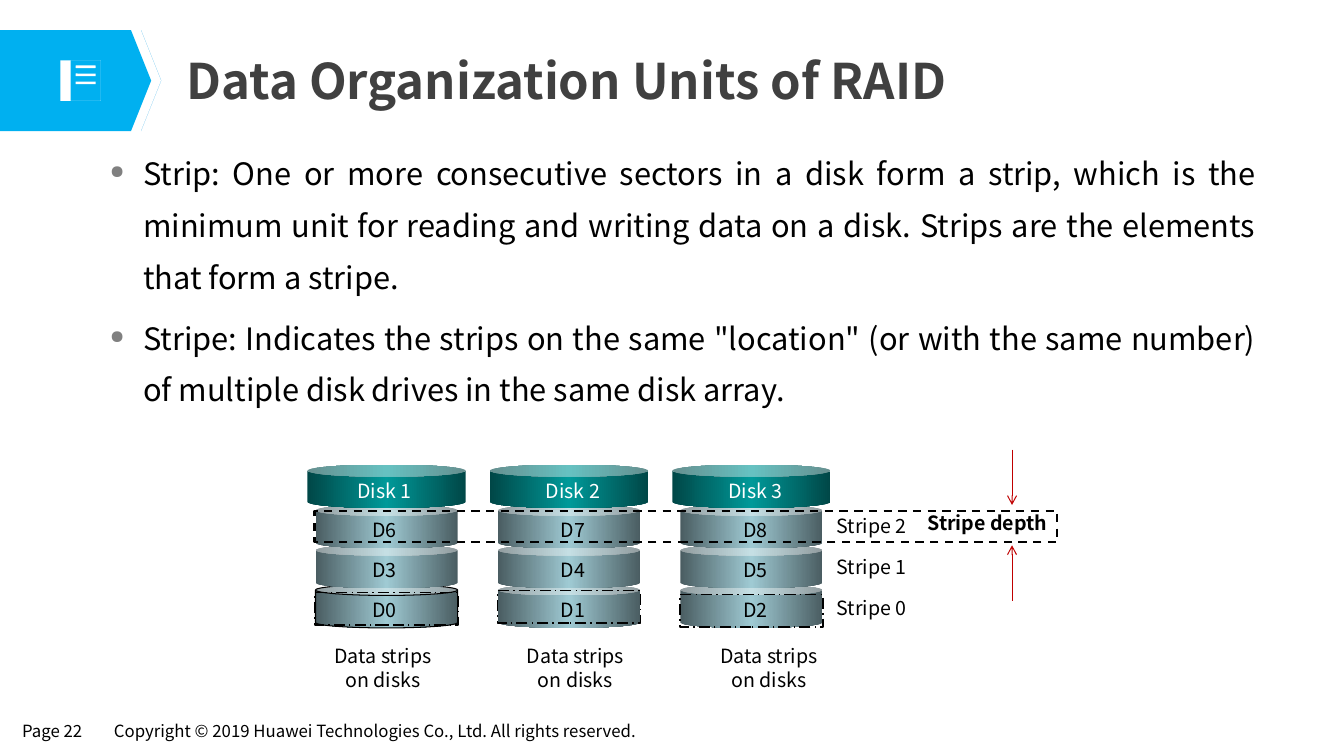
import copy
from dataclasses import dataclass
from typing import Optional

import lxml.etree
import pptx
import pptx.dml.color
import pptx.enum.dml
import pptx.enum.shapes
import pptx.enum.text
import pptx.oxml.ns
import pptx.shapes.autoshape
import pptx.slide
import pptx.util

RGB = pptx.dml.color.RGBColor
BLACK = RGB(0x00, 0x00, 0x00)
WHITE = RGB(0xFF, 0xFF, 0xFF)
TITLE_GREY = RGB(0x40, 0x40, 0x40)
BANNER_BLUE = RGB(0x00, 0xB0, 0xF0)
CHEVRON_BLUE = RGB(0x0B, 0x9C, 0xE5)
ARROW_RED = RGB(0xC0, 0x00, 0x00)
STRIP_EDGE = RGB(0x4A, 0x5D, 0x62)
STRIP_SHINE = RGB(0x9F, 0xCA, 0xD3)
HEAD_EDGE = RGB(0x00, 0x47, 0x47)
HEAD_SHINE = RGB(0x00, 0x99, 0x99)

FONT = "Noto Sans CJK SC"
CELL = pptx.util.Inches(0.1)
COLUMNS, ROWS = 133.33, 75
SHAPE = pptx.enum.shapes.MSO_SHAPE
DASH = pptx.enum.dml.MSO_LINE
ALIGN = pptx.enum.text.PP_ALIGN
Point = tuple[float, float]


@dataclass(frozen=True)
class Area:
    col: float
    row: float
    cols: float
    rows: float

    def emu(self) -> list[int]:
        return [round(n * CELL) for n in (self.col, self.row, self.cols, self.rows)]


@dataclass(frozen=True)
class Style:
    size: float = 14
    color: RGB = BLACK
    bold: bool = False
    align: Optional[ALIGN] = None
    wrap: bool = False
    inset: Point = (0.9, 0.4)
    grow: bool = True
    bulleted: bool = False


@dataclass(frozen=True)
class Disk:
    name: str
    strips: tuple[str, str, str]
    label_center: float
    caption_center: float
    outline_row: float
    outlined_can: bool = False


LABEL = Style(align=ALIGN.CENTER, inset=(1, 0.5))
HEAD_LABEL = Style(color=WHITE, align=ALIGN.CENTER, inset=(1, 0.5))
CAPTION = Style(align=ALIGN.CENTER, wrap=True)
BODY = Style(size=22, align=ALIGN.JUSTIFY, wrap=True, grow=False, bulleted=True)
TITLE = Style(size=35, color=TITLE_GREY, bold=True, wrap=True, inset=(1.1, 0.5))

DISKS = [
    Disk("Disk 1", ("D6", "D3", "D0"), 38.15, 38, 58.8, True),
    Disk("Disk 2", ("D7", "D4", "D1"), 56.85, 57.1, 58.6),
    Disk("Disk 3", ("D8", "D5", "D2"), 74.95, 76.3, 59),
]
FIRST_DISK, DISK_PITCH = 38.35, 18.1
FIRST_STRIP, STRIP_PITCH = 50.1, 3.95

BANNER = [[(0, 3.2), (13.2, 3.2), (15.1, 8), (13.2, 12.7), (0, 12.7)]]
CHEVRON = [[(13.6, 3.2), (14.2, 3.2), (16.2, 8), (14.2, 12.7), (13.6, 12.7), (15.6, 8)]]
RECEIPT = [
    [(6.9, 5.5), (10.1, 5.5), (10.4, 5.6), (10.5, 6), (10.5, 10), (10.4, 10.3),
     (10.1, 10.4), (9.3, 10), (8.5, 10.4), (7.7, 10), (6.9, 10.4), (6.6, 10.3),
     (6.4, 10), (6.4, 6), (6.5, 5.6)],
    [(6.9, 5.8), (6.7, 6), (6.7, 10), (6.8, 10.1), (7.7, 9.7), (8.5, 10.1),
     (9.3, 9.7), (10.1, 10.1), (10.2, 10), (10.2, 6), (10.1, 5.8)],
]


def add_bullet(paragraph) -> None:
    properties = paragraph._p.get_or_add_pPr()
    indent = pptx.util.Inches(0.33)
    properties.set("marL", str(indent))
    properties.set("indent", str(-indent))
    qn = pptx.oxml.ns.qn
    color = lxml.etree.SubElement(properties, qn("a:buClr"))
    lxml.etree.SubElement(color, qn("a:srgbClr"), val="808080")
    lxml.etree.SubElement(properties, qn("a:buSzPct"), val="60000")
    lxml.etree.SubElement(properties, qn("a:buChar"), char="●")


def add_text(slide: pptx.slide.Slide, area: Area, lines: list[str], style: Style) -> None:
    frame = slide.shapes.add_textbox(*area.emu()).text_frame
    frame.word_wrap = style.wrap
    if style.grow:
        frame.auto_size = pptx.enum.text.MSO_AUTO_SIZE.SHAPE_TO_FIT_TEXT
    side, end = (round(n * CELL) for n in style.inset)
    frame.margin_left = frame.margin_right = side
    frame.margin_top = frame.margin_bottom = end
    frame.text = "\n".join(lines)
    for index, paragraph in enumerate(frame.paragraphs):
        paragraph.alignment = style.align
        if style.bulleted:
            paragraph.line_spacing = 1.4
            if index:
                paragraph.space_before = pptx.util.Pt(6.6)
            add_bullet(paragraph)
        paragraph.font.name = FONT
        paragraph.font.size = pptx.util.Pt(style.size)
        paragraph.font.bold = style.bold
        paragraph.font.color.rgb = style.color


def add_outline(slide: pptx.slide.Slide, contours: list[list[Point]], color: RGB) -> None:
    builder = slide.shapes.build_freeform(*contours[0][0], scale=CELL)
    for index, contour in enumerate(contours):
        if index:
            builder.move_to(*contour[0])
        builder.add_line_segments(contour[1:], close=True)
    paint(builder.convert_to_shape(), color)


def paint(shape: pptx.shapes.autoshape.Shape, color: RGB) -> None:
    shape.shadow.inherit = False
    shape.fill.solid()
    shape.fill.fore_color.rgb = color
    shape.line.fill.background()


def add_can(slide: pptx.slide.Slide, area: Area, edge: RGB, shine: RGB,
            depth: float, outlined: bool = False) -> None:
    can = slide.shapes.add_shape(SHAPE.CAN, *area.emu())
    can.shadow.inherit = False
    can.adjustments[0] = depth
    can.fill.gradient()
    can.fill.gradient_angle = 0
    stops = can._element.spPr.find(".//" + pptx.oxml.ns.qn("a:gsLst"))
    stops.append(copy.deepcopy(stops[0]))
    for stop, position, color in zip(can.fill.gradient_stops, (0, 0.5, 1), (edge, shine, edge)):
        stop.position = position
        stop.color.rgb = color
    if outlined:
        can.line.color.rgb = BLACK
        can.line.width = pptx.util.Pt(0.75)
    else:
        can.line.fill.background()


def add_dashed_box(slide: pptx.slide.Slide, area: Area, width: float, dash: DASH) -> None:
    box = slide.shapes.add_shape(SHAPE.RECTANGLE, *area.emu())
    box.shadow.inherit = False
    box.fill.background()
    box.line.color.rgb = BLACK
    box.line.width = pptx.util.Pt(width)
    box.line.dash_style = dash


def add_arrow(slide: pptx.slide.Slide, col: float, start_row: float, end_row: float) -> None:
    ends = [round(n * CELL) for n in (col, start_row, col, end_row)]
    arrow = slide.shapes.add_connector(pptx.enum.shapes.MSO_CONNECTOR.STRAIGHT, *ends)
    arrow.line.color.rgb = ARROW_RED
    arrow.line.width = pptx.util.Pt(0.75)
    qn = pptx.oxml.ns.qn
    lxml.etree.SubElement(arrow.line._get_or_add_ln(), qn("a:tailEnd"), type="arrow")
    lxml.etree.SubElement(arrow._element.spPr, qn("a:effectLst"))


def add_disk(slide: pptx.slide.Slide, disk: Disk, center: float) -> None:
    for level in (2, 1, 0):
        row = FIRST_STRIP + level * STRIP_PITCH
        add_can(slide, Area(center - 7.05, row, 14.1, 4.3), STRIP_EDGE, STRIP_SHINE,
                0.25, disk.outlined_can and level == 2)
    for level, strip in enumerate(disk.strips):
        row = FIRST_STRIP + 0.8 + level * STRIP_PITCH
        add_text(slide, Area(disk.label_center - 2.35, row, 4.7, 3.4), [strip], LABEL)
    add_can(slide, Area(center - 7.85, 46.1, 15.7, 4.3), HEAD_EDGE, HEAD_SHINE, 0.28)
    add_text(slide, Area(disk.label_center - 3.9, 47, 7.8, 3.4), [disk.name], HEAD_LABEL)
    add_dashed_box(slide, Area(center - 7.1, disk.outline_row, 14.2, 3.2), 1, DASH.LONG_DASH_DOT)
    add_text(slide, Area(disk.caption_center - 10, 63.5, 20, 5.6),
             ["Data strips", "on disks"], CAPTION)


def main() -> None:
    deck = pptx.Presentation()
    deck.slide_width = round(COLUMNS * CELL)
    deck.slide_height = ROWS * CELL
    slide = deck.slides.add_slide(deck.slide_layouts[6])

    add_text(slide, Area(1.3, 71.1, 8.4, 2.9), ["Page 22"], Style(size=12))
    add_text(slide, Area(10.4, 71.1, 56.6, 2.9),
             ["Copyright © 2019 Huawei Technologies Co., Ltd. All rights reserved."], Style(size=12))
    for contours, color in ((BANNER, BANNER_BLUE), (CHEVRON, CHEVRON_BLUE), (RECEIPT, WHITE)):
        add_outline(slide, contours, color)
    for entry in range(3):
        area = Area(7.5, 6.5 + 0.8 * entry, 2, 0.25)
        paint(slide.shapes.add_shape(SHAPE.ROUNDED_RECTANGLE, *area.emu()), WHITE)

    add_text(slide, Area(10, 13.5, 115.5, 51.2), [
        "Strip: One or more consecutive sectors in a disk form a strip, which is the minimum unit "
        "for reading and writing data on a disk. Strips are the elements that form a stripe.",
        'Stripe: Indicates the strips on the same "location" (or with the same number) of multiple '
        "disk drives in the same disk array.",
    ], BODY)
    add_text(slide, Area(17.4, 4.5, 107.5, 7), ["Data Organization Units of RAID"], TITLE)

    for index, disk in enumerate(DISKS):
        add_disk(slide, disk, FIRST_DISK + index * DISK_PITCH)
    add_dashed_box(slide, Area(31.2, 50.7, 73.7, 3.1), 1.5, DASH.DASH)
    for level, number in enumerate((2, 1, 0)):
        add_text(slide, Area(82.1, 50.6 + 4.05 * level, 9, 3.2), [f"Stripe {number}"], Style())
    add_text(slide, Area(91.1, 50.3, 16.1, 3.2), ["Stripe depth"], Style(bold=True, wrap=True))
    add_arrow(slide, 100.4, 44.6, 50.1)
    add_arrow(slide, 100.4, 59.6, 54.1)
    deck.save("out.pptx")


if __name__ == "__main__":
    main()
